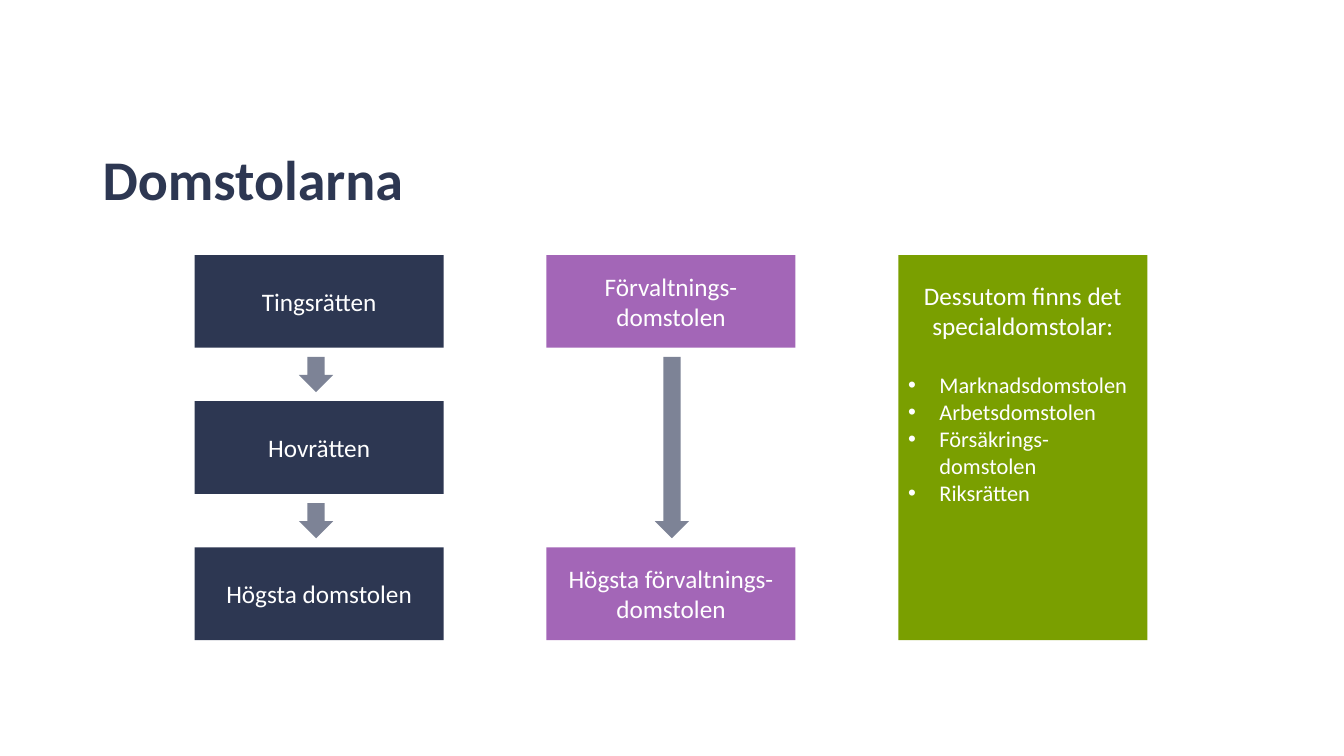
from lxml import etree
from pptx import Presentation
from pptx.dml.color import RGBColor
from pptx.enum.shapes import MSO_SHAPE
from pptx.enum.text import MSO_ANCHOR, PP_ALIGN
from pptx.oxml.ns import qn
from pptx.util import Inches, Pt

RECTANGLE, DOWN_ARROW = MSO_SHAPE.RECTANGLE, MSO_SHAPE.DOWN_ARROW
TOP, MIDDLE = MSO_ANCHOR.TOP, MSO_ANCHOR.MIDDLE
LEFT, CENTER = PP_ALIGN.LEFT, PP_ALIGN.CENTER

COLORS = {"navy": "2D3752", "purple": "A366B7", "green": "7A9F00",
          "arrow": "7D8396", "white": "FFFFFF"}
TITLE_FORMAT = {"name": "Calibri", "size": Pt(40), "bold": True}
LABEL_FORMAT = {"name": "Calibri", "size": Pt(18)}
BULLET_FORMAT = {"name": "Calibri", "size": Pt(16)}

COLUMN_LEFT, COLUMN_STEP, COLUMN_WIDTH = 1.93, 3.49, 2.47
ROW_TOP, ROW_STEP, COURT_HEIGHT = 2.53, 1.45, 0.92
COLUMN_HEIGHT = 2 * ROW_STEP + COURT_HEIGHT
ARROW_WIDTH, ARROW_MARGIN = 0.34, 0.09
BULLET_INDENT = 0.31

# Each chain: colour, sideways shift of its arrows, courts by row
CHAINS = [
    ("navy", -0.03, {0: "Tingsrätten", 1: "Hovrätten", 2: "Högsta domstolen"}),
    ("purple", 0.01, {0: "Förvaltnings-domstolen",
                      2: "Högsta förvaltnings-domstolen"}),
]
SPECIAL_HEADING = "Dessutom finns det specialdomstolar:"
SPECIAL_COURTS = ["Marknadsdomstolen", "Arbetsdomstolen",
                  "Försäkrings-domstolen", "Riksrätten"]


def write(para, text, text_format, color, alignment):
    para.alignment = alignment
    span = para.add_run()
    span.text = text
    for name, value in text_format.items():
        setattr(span.font, name, value)
    span.font.color.rgb = RGBColor.from_string(COLORS[color])


def add_bullet(para):
    properties = para._p.get_or_add_pPr()
    properties.set("marL", str(Inches(BULLET_INDENT)))
    properties.set("indent", str(-Inches(BULLET_INDENT)))
    etree.SubElement(properties, qn("a:buFont")).set("typeface", "Arial")
    etree.SubElement(properties, qn("a:buChar")).set("char", "•")


def add_block(page, kind, box, color):
    block = page.shapes.add_shape(kind, *(Inches(length) for length in box))
    block.shadow.inherit = False
    block.fill.solid()
    block.fill.fore_color.rgb = RGBColor.from_string(COLORS[color])
    block.line.fill.background()
    return block


def add_title(page, box, text):
    frame = page.shapes.add_textbox(*(Inches(length) for length in box)).text_frame
    frame.word_wrap = True
    frame.vertical_anchor = MIDDLE
    para = frame.paragraphs[0]
    para.line_spacing = 0.9
    write(para, text, TITLE_FORMAT, "navy", LEFT)


def add_chain(page, box, color, arrow_shift, courts):
    """Stack courts in their rows and join neighbours with arrows."""
    left, top, width, _ = box
    arrow_left = left + (width - ARROW_WIDTH) / 2 + arrow_shift
    previous_bottom = None
    for row, name in courts.items():
        court_top = top + row * ROW_STEP
        court = add_block(page, RECTANGLE,
                          (left, court_top, width, COURT_HEIGHT), color)
        frame = court.text_frame
        frame.word_wrap = True
        frame.vertical_anchor = MIDDLE
        write(frame.paragraphs[0], name, LABEL_FORMAT, "white", CENTER)
        if previous_bottom is not None:
            arrow_height = court_top - previous_bottom - 2 * ARROW_MARGIN
            add_block(page, DOWN_ARROW,
                      (arrow_left, previous_bottom + ARROW_MARGIN,
                       ARROW_WIDTH, arrow_height), "arrow")
        previous_bottom = court_top + COURT_HEIGHT


def add_special_courts(page, box, heading, courts):
    frame = add_block(page, RECTANGLE, box, "green").text_frame
    frame.word_wrap = True
    frame.vertical_anchor = TOP
    frame.margin_top = Inches(0.25)
    write(frame.paragraphs[0], heading, LABEL_FORMAT, "white", CENTER)
    for index, name in enumerate(courts):
        para = frame.add_paragraph()
        add_bullet(para)
        if index == 0:
            para.space_before = Pt(22)
        write(para, name, BULLET_FORMAT, "white", LEFT)


def main():
    deck = Presentation()
    deck.slide_width, deck.slide_height = Inches(13.33), Inches(7.5)
    page = deck.slides.add_slide(deck.slide_layouts[6])
    columns = [(COLUMN_LEFT + index * COLUMN_STEP, ROW_TOP,
                COLUMN_WIDTH, COLUMN_HEIGHT) for index in range(3)]
    add_title(page, (0.92, 1.08, 11.5, 1.45), "Domstolarna")
    for box, chain in zip(columns, CHAINS):
        add_chain(page, box, *chain)
    add_special_courts(page, columns[-1], SPECIAL_HEADING, SPECIAL_COURTS)
    deck.save("out.pptx")


if __name__ == "__main__":
    main()
